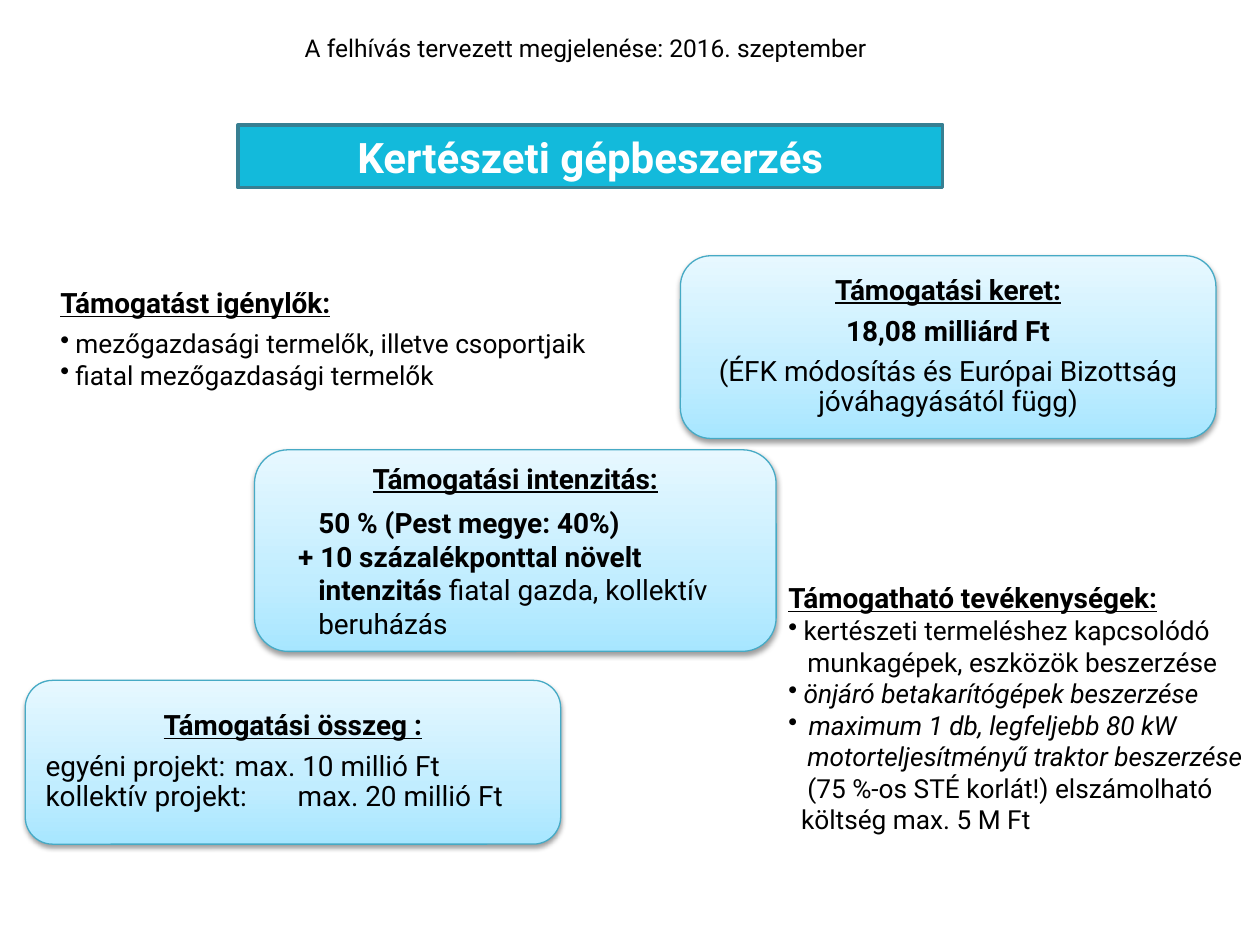
from dataclasses import dataclass

from lxml import etree
from pptx import Presentation
from pptx import util as u
from pptx.dml.color import RGBColor
from pptx.enum import shapes, text
from pptx.oxml import parse_xml
from pptx.oxml.ns import nsdecls, qn

LEFT, CENTER, JUSTIFY = text.PP_ALIGN.LEFT, text.PP_ALIGN.CENTER, text.PP_ALIGN.JUSTIFY


@dataclass(frozen=True)
class Theme:
    font: str = "Roboto"
    ink: str = "000000"
    white: str = "FFFFFF"
    banner: str = "13BADB"
    banner_edge: str = "377F92"
    card_edge: str = "46AAC5"
    card_stops: tuple = ((0, "A7E6FF"), (35, "C1EDFF"), (100, "E7F8FF"))
    title_size: int = 24
    heading_size: int = 16
    list_size: int = 15
    note_size: int = 14


def apply(target, values):
    for name, value in values.items():
        setattr(target, name, value)


def para(*runs, margin=0, indent=0, bullet=False, tab=None, **layout):
    return dict(runs=runs, margin=margin, indent=indent, bullet=bullet, tab=tab, layout=layout)


def heading(words, **layout):
    return para((words, {"bold": True, "underline": True}), **layout)


def item(words, **style):
    return para((words, style), margin=0.12, indent=-0.12, bullet=True)


class SlideBuilder:
    def __init__(self, slide, theme):
        self.slide = slide
        self.theme = theme

    def fill_text(self, shape, paragraphs, size, color=None, anchor=text.MSO_ANCHOR.TOP):
        frame = shape.text_frame
        apply(frame, {"word_wrap": True, "auto_size": text.MSO_AUTO_SIZE.NONE,
                      "vertical_anchor": anchor})
        for number, content in enumerate(paragraphs):
            line = frame.add_paragraph() if number else frame.paragraphs[0]
            apply(line, {"alignment": LEFT, **content["layout"]})
            self.indent(line, content)
            for words, style in content["runs"]:
                run = line.add_run()
                run.text = words
                apply(run.font, {"name": self.theme.font, "size": u.Pt(size), **style})
                run.font.color.rgb = RGBColor.from_string(color or self.theme.ink)

    def indent(self, line, content):
        props = line._p.get_or_add_pPr()
        props.set("marL", str(u.Inches(content["margin"])))
        props.set("indent", str(u.Inches(content["indent"])))
        if content["bullet"]:
            etree.SubElement(props, qn("a:buChar"), char="•")
        if content["tab"]:
            tabs = etree.SubElement(props, qn("a:tabLst"))
            etree.SubElement(tabs, qn("a:tab"), pos=str(u.Inches(content["tab"])), algn="l")

    def outline(self, shape, color, width):
        shape.line.color.rgb = RGBColor.from_string(color)
        shape.line.width = u.Pt(width)

    def title(self, box, words):
        banner = self.slide.shapes.title
        apply(banner, dict(zip(("left", "top", "width", "height"), map(u.Inches, box))))
        banner.fill.solid()
        banner.fill.fore_color.rgb = RGBColor.from_string(self.theme.banner)
        self.outline(banner, self.theme.banner_edge, 2)
        self.fill_text(banner, [para((words, {"bold": True}), alignment=CENTER)],
                       self.theme.title_size, self.theme.white, text.MSO_ANCHOR.MIDDLE)

    def text(self, box, paragraphs, size):
        note = self.slide.shapes.add_textbox(*map(u.Inches, box))
        self.fill_text(note, paragraphs, size)

    def card(self, box, paragraphs):
        card = self.slide.shapes.add_shape(
            shapes.MSO_SHAPE.ROUNDED_RECTANGLE, *map(u.Inches, box))
        stops = "".join(
            f'<a:gs pos="{place * 1000}"><a:srgbClr val="{color}"/></a:gs>'
            for place, color in self.theme.card_stops)
        gradient = parse_xml(
            f'<a:gradFill {nsdecls("a")} rotWithShape="1"><a:gsLst>{stops}</a:gsLst>'
            '<a:lin ang="16200000" scaled="0"/></a:gradFill>')
        props = card._element.spPr
        props.find(qn("a:prstGeom")).addnext(gradient)
        self.outline(card, self.theme.card_edge, 0.75)
        card.shadow.inherit = False
        props.find(qn("a:effectLst")).append(parse_xml(
            f'<a:outerShdw {nsdecls("a")} blurRad="{u.Pt(3.1)}" dist="{u.Pt(1.6)}" '
            'dir="5400000" rotWithShape="0"><a:srgbClr val="000000">'
            '<a:alpha val="38000"/></a:srgbClr></a:outerShdw>'))
        self.fill_text(card, paragraphs, self.theme.heading_size,
                       anchor=text.MSO_ANCHOR.MIDDLE)


def main():
    deck = Presentation()
    deck.slide_width, deck.slide_height = u.Inches(10), u.Inches(7.5)
    theme = Theme()
    page = SlideBuilder(deck.slides.add_slide(deck.slide_layouts[5]), theme)
    bold, italic = {"bold": True}, {"italic": True}
    heading_font = {"size": u.Pt(theme.heading_size), "bold": True, "underline": True}
    tight = {"line_spacing": 0.9}
    spaced = {**tight, "space_after": u.Pt(6)}
    centered = {**spaced, "alignment": CENTER}

    page.title((1.89, 0.99, 5.59, 0.5), "Kertészeti gépbeszerzés")
    page.text((2.32, 0.21, 4.72, 0.34),
              [para(("A felhívás tervezett megjelenése: 2016. szeptember", {}))],
              theme.note_size)

    applicants = item("mezőgazdasági termelők, illetve csoportjaik")
    applicants["layout"].update(tight, space_before=u.Pt(6))
    page.text((0.38, 2.25, 4.78, 0.91), [
        para(("Támogatást igénylők:", heading_font), alignment=JUSTIFY, **tight),
        applicants,
        item("fiatal mezőgazdasági termelők"),
    ], theme.list_size)

    page.card((2.02, 3.57, 4.14, 1.6), [
        heading("Támogatási intenzitás:", alignment=CENTER),
        para(("50 % (Pest megye: 40%)", bold), margin=0.33, space_before=u.Pt(6)),
        para(("+ 10 százalékponttal növelt", bold), margin=0.17),
        para(("intenzitás ", bold), ("fiatal gazda, kollektív", {}), margin=0.33),
        para(("beruházás", {}), margin=0.33),
    ])
    page.card((5.4, 2.03, 4.25, 1.45), [
        heading("Támogatási keret:", **centered),
        para(("18,08 milliárd Ft", bold), **centered),
        para(("(ÉFK módosítás és Európai Bizottság jóváhagyásától függ)", {}), **centered),
    ])
    page.card((0.2, 5.4, 4.25, 1.3), [
        heading("Támogatási összeg :", **centered),
        para(("egyéni projekt:\tmax. 10 millió Ft", {}), tab=1.67, **tight),
        para(("kollektív projekt:\tmax. 20 millió Ft", {}), tab=1.67, **spaced),
    ])

    page.text((6.16, 4.59, 3.84, 2.36), [
        para(("Támogatható tevékenységek:", heading_font), alignment=JUSTIFY, **tight),
        item("kertészeti termeléshez kapcsolódó"),
        para(("munkagépek, eszközök beszerzése", {}), margin=0.15),
        item("önjáró betakarítógépek beszerzése", **italic),
        para(("maximum 1 db, legfeljebb 80 kW", italic),
             margin=0.16, indent=-0.16, bullet=True),
        para(("motorteljesítményű traktor beszerzése", italic), indent=0.15),
        para(("(75 %-os STÉ korlát!) elszámolható költség max. 5 M Ft", {}),
             margin=0.1, indent=0.05),
    ], theme.list_size)

    deck.save("out.pptx")


if __name__ == "__main__":
    main()
